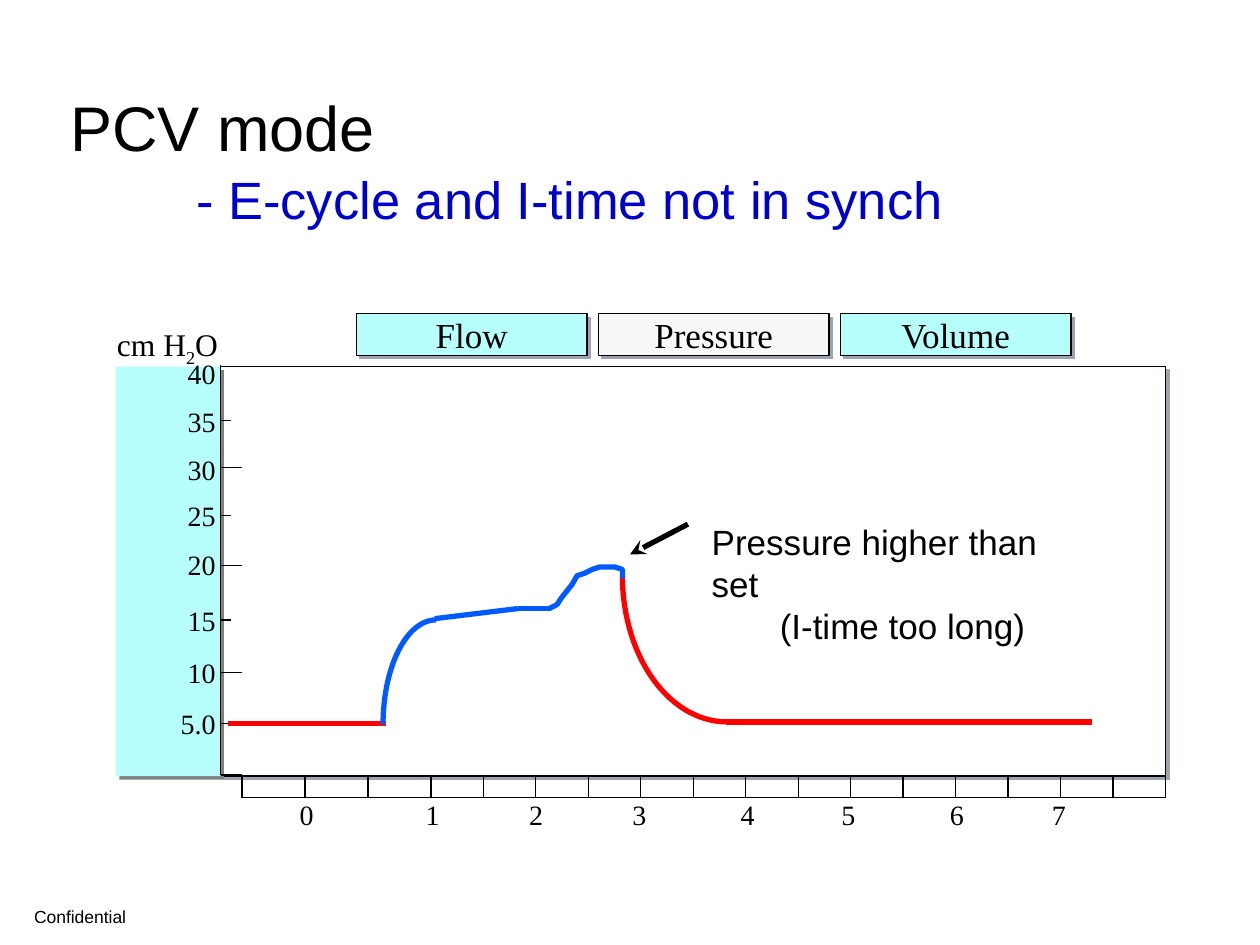
import math
from dataclasses import dataclass

import pptx
import pptx.dml.color
import pptx.enum.shapes
import pptx.enum.text
import pptx.oxml
import pptx.oxml.ns
import pptx.oxml.xmlchemy
import pptx.util

Inches = pptx.util.Inches
Pt = pptx.util.Pt
Align = pptx.enum.text.PP_ALIGN
Anchor = pptx.enum.text.MSO_ANCHOR
Point = tuple[float, float]

COLORS = {
    "black": "000000", "white": "FFFFFF", "cyan": "B7FFFC", "pale": "F8F8F8",
    "title": "0000CC", "red": "FF0000", "blue": "005AFF",
    "soft": "9EA1B2", "gray": "808080",
}
SERIF, SANS = "Times New Roman", "Arial"


@dataclass
class Panel:
    left: float
    top: float
    width: float
    height: float
    fill: str
    shadow: str = "soft"
    outlined: bool = True
    text: str = ""


@dataclass
class Label:
    text: str
    left: float
    top: float
    width: float
    height: float = 0.37
    size: float = 16
    font: str = SERIF
    align: Align = Align.LEFT
    wrap: bool = False


@dataclass
class Tick:
    value: str
    at: float
    length: float
    label_top: float


PANELS = [
    Panel(1.75, 2.91, 7.5, 3.25, "white"),
    Panel(0.92, 2.91, 0.83, 3.25, "cyan", "gray", False),
] + [
    Panel(2.83 + 1.92 * index, 2.49, 1.83, 0.33, fill, text=name)
    for index, (name, fill) in enumerate(
        [("Flow", "cyan"), ("Pressure", "pale"), ("Volume", "cyan")])
]
PRESSURE_TICKS = [
    Tick("40", 2.91, 0.17, 2.78), Tick("35", 3.34, 0.08, 3.16),
    Tick("30", 3.71, 0.17, 3.54), Tick("25", 4.09, 0.08, 3.91),
    Tick("20", 4.49, 0.17, 4.3), Tick("15", 4.92, 0.08, 4.74),
    Tick("10", 5.34, 0.17, 5.15), Tick("5.0", 5.74, 0.08, 5.56),
    Tick("", 6.15, 0.17, 0),
]
TIME_TICKS = [1.92, 2.42, 2.92] + [3.42 + 5.83 * step / 14 for step in range(15)]
TIME_LABELS = [2.28, 3.28, 4.1, 4.92, 5.78, 6.58, 7.44, 8.25]
PRESSURE_BUMP = [
    (4.36, 4.83), (4.42, 4.8), (4.46, 4.74), (4.5, 4.69), (4.54, 4.64),
    (4.58, 4.57), (4.64, 4.55), (4.7, 4.52), (4.76, 4.5), (4.88, 4.5),
    (4.94, 4.52), (4.94, 4.59),
]


def rgb(name: str) -> pptx.dml.color.RGBColor:
    return pptx.dml.color.RGBColor.from_string(COLORS[name])


def style_font(font, size: float, name: str, color: str = "black") -> None:
    font.size, font.name = Pt(size), name
    font.color.rgb = rgb(color)


def add_shadow(shape, color: str) -> None:
    shape.shadow.inherit = False
    effects = shape._element.spPr.find(pptx.oxml.ns.qn("a:effectLst"))
    effects.append(pptx.oxml.parse_xml(
        f'<a:outerShdw {pptx.oxml.ns.nsdecls("a")} dist="35560" dir="2700000" '
        f'algn="ctr" rotWithShape="0"><a:srgbClr val="{COLORS[color]}"/></a:outerShdw>'))


def add_panel(page, panel: Panel) -> None:
    shape = page.shapes.add_shape(
        pptx.enum.shapes.MSO_SHAPE.RECTANGLE, Inches(panel.left), Inches(panel.top),
        Inches(panel.width), Inches(panel.height))
    shape.fill.solid()
    shape.fill.fore_color.rgb = rgb(panel.fill)
    if panel.outlined:
        shape.line.color.rgb = rgb("black")
        shape.line.width = Pt(0.75)
    else:
        shape.line.fill.background()
    add_shadow(shape, panel.shadow)
    if panel.text:
        frame = shape.text_frame
        frame.word_wrap = False
        frame.vertical_anchor = Anchor.MIDDLE
        frame.text = panel.text
        frame.paragraphs[0].alignment = Align.CENTER
        style_font(frame.paragraphs[0].runs[0].font, 20, SERIF)


def add_label(page, label: Label):
    box = page.shapes.add_textbox(Inches(label.left), Inches(label.top),
                                  Inches(label.width), Inches(label.height))
    frame = box.text_frame
    frame.word_wrap = label.wrap
    frame.text = label.text
    for para in frame.paragraphs:
        para.alignment = label.align
        for span in para.runs:
            style_font(span.font, label.size, label.font)
    return frame


def add_line(page, start: Point, end: Point, color: str = "black", width: float = 0.75):
    line = page.shapes.add_connector(
        pptx.enum.shapes.MSO_CONNECTOR.STRAIGHT, *map(Inches, start + end))
    line.line.color.rgb = rgb(color)
    line.line.width = Pt(width)
    line._element.spPr.append(pptx.oxml.xmlchemy.OxmlElement("a:effectLst"))
    return line


def add_curve(page, points: list[Point], color: str) -> None:
    builder = page.shapes.build_freeform(
        Inches(points[0][0]), Inches(points[0][1]))
    builder.add_line_segments([(Inches(x), Inches(y)) for x, y in points[1:]], close=False)
    curve = builder.convert_to_shape()
    curve.fill.background()
    curve.line.color.rgb = rgb(color)
    curve.line.width = Pt(3)
    curve.shadow.inherit = False


def quarter_arc(center: Point, radius_x: float, radius_y: float, start: float) -> list[Point]:
    """Points of a quarter ellipse, clockwise from an angle in degrees."""
    angles = [math.radians(start + 90 * step / 30) for step in range(31)]
    return [(center[0] + radius_x * math.cos(angle), center[1] + radius_y * math.sin(angle))
            for angle in angles]


def add_axes(page) -> None:
    # Pressure axis
    unit = add_label(page, Label("cm H", 0.83, 2.53, 1.01, 0.4, 18)).paragraphs[0]
    for text in ("2", "O"):
        span = unit.add_run()
        span.text = text
        style_font(span.font, 18, SERIF)
    unit.runs[1]._r.get_or_add_rPr().set("baseline", "-25000")
    add_line(page, (1.75, 2.9), (1.75, 6.15))
    for tick in PRESSURE_TICKS:
        add_line(page, (1.75, tick.at), (1.75 + tick.length, tick.at))
        if tick.value:
            add_label(page, Label(tick.value, 1.33, tick.label_top, 0.48, align=Align.RIGHT))
    # Time axis
    add_line(page, (1.92, 6.33), (9.25, 6.33))
    for x in TIME_TICKS:
        add_line(page, (x, 6.16), (x, 6.33))
    for second, left in enumerate(TIME_LABELS):
        add_label(page, Label(str(second), left, 6.28, 0.31))


def add_waveform(page) -> None:
    add_line(page, (1.81, 5.74), (3.06, 5.74), "red", 3)
    add_curve(page, quarter_arc((5.77, 4.57), 0.83, 1.16, 90), "red")
    add_line(page, (5.76, 5.73), (8.67, 5.73), "red", 3)
    add_curve(page, PRESSURE_BUMP, "blue")
    add_line(page, (4.11, 4.83), (4.37, 4.83), "blue", 3)
    add_curve(page, quarter_arc((3.46, 5.75), 0.42, 0.83, 180), "blue")
    add_line(page, (3.45, 4.91), (4.11, 4.83), "blue", 3)


def main() -> None:
    deck = pptx.Presentation()
    deck.slide_width, deck.slide_height = Inches(10), Inches(7.5)
    page = deck.slides.add_slide(deck.slide_layouts[6])

    # Footer
    footer = add_label(page, Label("Confidential", 0.27, 7.19, 2.01, 0.17, 10, SANS, wrap=True))
    footer.margin_left = footer.margin_right = footer.margin_top = footer.margin_bottom = 0
    footer.vertical_anchor = Anchor.BOTTOM

    # Monitor screen
    for panel in PANELS:
        add_panel(page, panel)
    add_axes(page)

    # Annotation with arrow
    note = add_label(page, Label("Pressure higher than set\n(I-time too long)",
                                 5.55, 4.08, 3.22, 0.77, 20, SANS, wrap=True))
    note.paragraphs[1]._p.get_or_add_pPr().set("marL", str(Inches(0.54)))
    arrow = add_line(page, (5, 4.4), (5.46, 4.16), width=3)
    head = pptx.oxml.xmlchemy.OxmlElement("a:headEnd")
    head.set("type", "stealth")
    arrow.line._get_or_add_ln().append(head)
    add_waveform(page)

    # Title
    title = add_label(page, Label("PCV mode\n- E-cycle and I-time not in synch",
                                  0.46, 0.6, 9, 1.51, 36, SANS, wrap=True))
    title.margin_top = Inches(0.1)
    subtitle = title.paragraphs[1]
    subtitle._p.get_or_add_pPr().set("marL", str(Inches(1)))
    subtitle.space_before = Pt(2)
    style_font(subtitle.runs[0].font, 30, SANS, "title")

    deck.save("out.pptx")


if __name__ == "__main__":
    main()
